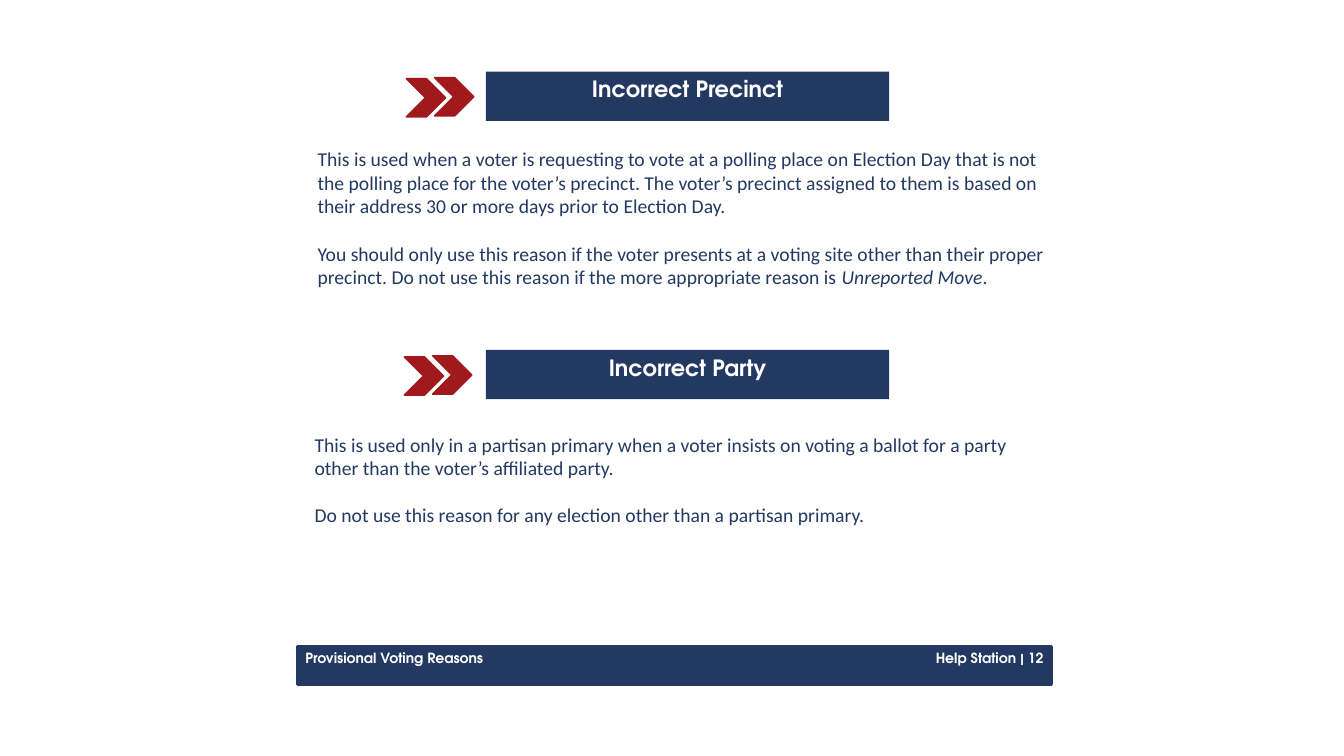
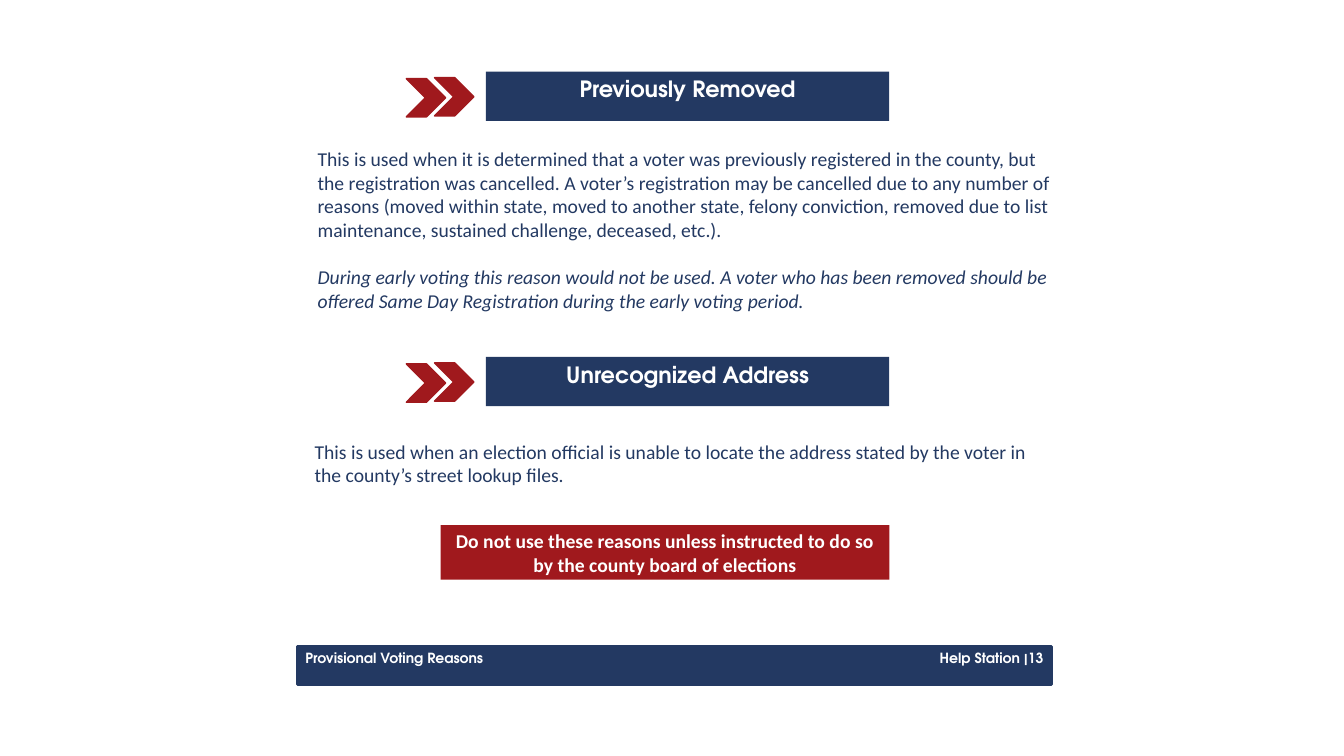
from dataclasses import dataclass

from pptx import Presentation
from pptx.dml.color import RGBColor
from pptx.enum.shapes import MSO_SHAPE
from pptx.enum.text import MSO_ANCHOR, PP_ALIGN
from pptx.util import Inches, Pt

RECTANGLE, CHEVRON = MSO_SHAPE.RECTANGLE, MSO_SHAPE.CHEVRON
LEFT, CENTER, RIGHT = PP_ALIGN.LEFT, PP_ALIGN.CENTER, PP_ALIGN.RIGHT
TOP = MSO_ANCHOR.TOP


@dataclass(frozen=True)
class Theme:
    navy: RGBColor = RGBColor(0x23, 0x39, 0x62)
    red: RGBColor = RGBColor(0xA0, 0x19, 0x1D)
    white: RGBColor = RGBColor(0xFF, 0xFF, 0xFF)
    display: str = "TeX Gyre Adventor"
    text: str = "Calibri"
    heading_size: int = 16
    body_size: int = 14
    footer_size: int = 10
    paragraph_gap: int = 17


THEME = Theme()
HEADING = dict(name=THEME.display, size=Pt(THEME.heading_size), bold=True)
BODY = dict(name=THEME.text, size=Pt(THEME.body_size))
WARNING = dict(BODY, bold=True)
FOOTER = dict(name=THEME.display, size=Pt(THEME.footer_size), bold=True)

FOOTER_TITLE = "Provisional Voting Reasons"

# Each paragraph is a list of (text, italic) runs.
SLIDES = [
    {
        "page": "Help Station | 12",
        "sections": [
            {
                "heading": "Incorrect Precinct", "top": 0.71, "arrows_left": 4.03,
                "body_left": 3.11, "body_drop": 0.71, "body_height": 1.63,
                "body": [
                    [("This is used when a voter is requesting to vote at a polling place on "
                      "Election Day that is not the polling place for the voter’s precinct. "
                      "The voter’s precinct assigned to them is based on their address 30 or "
                      "more days prior to Election Day.", False)],
                    [("You should only use this reason if the voter presents at a voting site "
                      "other than their proper precinct. Do not use this reason if the more "
                      "appropriate reason is", False),
                     (" Unreported Move", True), (".", False)],
                ],
            },
            {
                "heading": "Incorrect Party", "top": 3.47, "arrows_left": 4.01,
                "body_left": 3.08, "body_drop": 0.78, "body_height": 1.1,
                "body": [
                    [("This is used only in a partisan primary when a voter insists on voting "
                      "a ballot for a party other than the voter’s affiliated party.", False)],
                    [("Do not use this reason for any election other than a partisan primary.",
                      False)],
                ],
            },
        ],
    },
    {
        "page": "Help Station |13",
        "sections": [
            {
                "heading": "Previously Removed", "top": 0.71, "arrows_left": 4.03,
                "body_left": 3.11, "body_drop": 0.71, "body_height": 1.71,
                "body": [
                    [("This is used when it is determined that a voter was previously "
                      "registered in the county, but the registration was cancelled. A voter’s "
                      "registration may be cancelled due to any number of reasons (moved "
                      "within state, moved to another state, felony conviction, removed due to "
                      "list maintenance, sustained challenge, deceased, etc.).", False)],
                    [("During early voting this reason would not be used. A voter who has been "
                      "removed should be offered Same Day Registration during the early voting "
                      "period.", True)],
                ],
            },
            {
                "heading": "Unrecognized Address", "top": 3.54, "arrows_left": 4.03,
                "body_left": 3.08, "body_drop": 0.78, "body_height": 0.88,
                "body": [
                    [("This is used when an election official is unable to locate the address "
                      "stated by the voter in the county’s street lookup files.", False)],
                ],
            },
        ],
        "warning": "Do not use these reasons unless instructed to do so "
                   "by the county board of elections",
    },
]


def inches(box):
    return [Inches(length) for length in box]


def write(shape, paragraphs, font, color, align=LEFT, inset=(0.04, 0.04)):
    """Fill a shape with paragraphs of (text, italic) runs; inset is (side, top)."""
    frame = shape.text_frame
    side, edge = inches(inset)
    layout = dict(word_wrap=True, vertical_anchor=TOP, margin_left=side,
                  margin_right=side, margin_top=edge, margin_bottom=edge)
    for attribute, value in layout.items():
        setattr(frame, attribute, value)
    for index, runs in enumerate(paragraphs):
        paragraph = frame.add_paragraph() if index else frame.paragraphs[0]
        paragraph.alignment = align
        if index:
            paragraph.space_before = Pt(THEME.paragraph_gap)
        for text, italic in runs:
            run = paragraph.add_run()
            run.text = text
            for attribute, value in dict(font, italic=italic).items():
                setattr(run.font, attribute, value)
            run.font.color.rgb = color


def add_text(slide, box, paragraphs, font, color, **options):
    write(slide.shapes.add_textbox(*inches(box)), paragraphs, font, color, **options)


def add_block(shapes, kind, box, color, line_width=0):
    block = shapes.add_shape(kind, *inches(box))
    block.shadow.inherit = False
    block.fill.solid()
    block.fill.fore_color.rgb = color
    if line_width:
        block.line.color.rgb = color
        block.line.width = Pt(line_width)
    else:
        block.line.fill.background()
    return block


def add_banner(slide, box, text, font, color):
    banner = add_block(slide.shapes, RECTANGLE, box, color)
    write(banner, [[(text, False)]], font, THEME.white, align=CENTER)


def add_section(slide, section):
    top, left = section["top"], section["arrows_left"]
    add_banner(slide, (4.82, top, 4, 0.49), section["heading"], HEADING, THEME.navy)
    arrows = slide.shapes.add_group_shape()
    for dx, dy in ((0.28, 0.06), (0, 0.07)):
        add_block(arrows.shapes, CHEVRON, (left + dx, top + dy, 0.39, 0.38), THEME.red, 1)
    body_box = (section["body_left"], top + section["body_drop"], 7.41, section["body_height"])
    add_text(slide, body_box, section["body"], BODY, THEME.navy)


def add_footer(slide, page):
    add_block(slide.shapes, RECTANGLE, (2.95, 6.41, 7.48, 0.38), THEME.navy, 2)
    add_text(slide, (4.22, 6.4, 6.17, 0.39), [[(page, False)]], FOOTER, THEME.white,
             align=RIGHT)
    add_text(slide, (2.93, 6.39, 4.98, 0.27), [[(FOOTER_TITLE, False)]], FOOTER, THEME.white,
             inset=(0.1, 0.05))


def main():
    deck = Presentation()
    deck.slide_width, deck.slide_height = Inches(13.33), Inches(7.5)
    blank = deck.slide_layouts[6]
    for content in SLIDES:
        slide = deck.slides.add_slide(blank)
        add_footer(slide, content["page"])
        for section in content["sections"]:
            add_section(slide, section)
        if "warning" in content:
            add_banner(slide, (4.37, 5.21, 4.45, 0.54), content["warning"], WARNING, THEME.red)
    deck.save("out.pptx")


if __name__ == "__main__":
    main()
